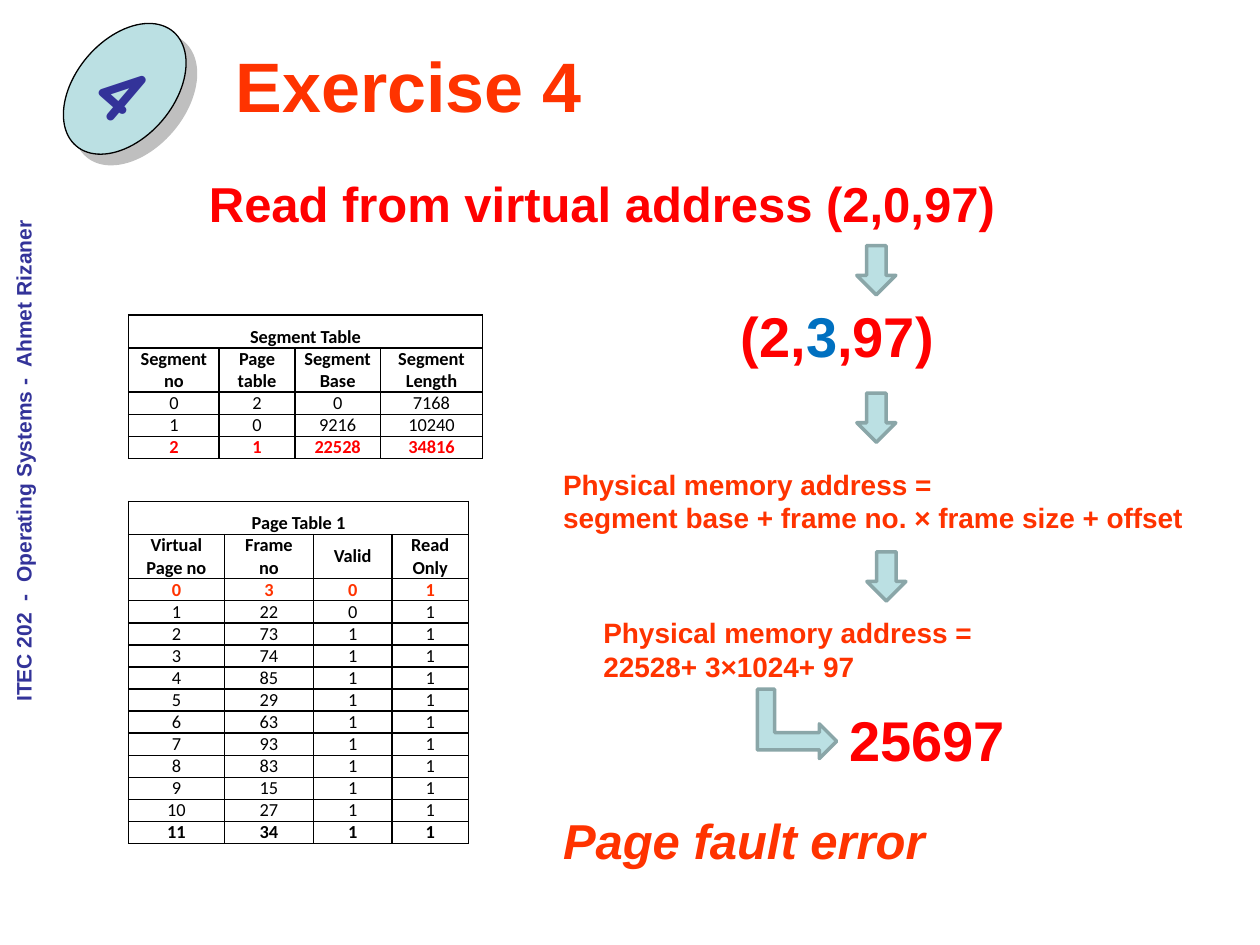
from lxml.etree import SubElement
from pptx import Presentation
from pptx.dml.color import RGBColor
from pptx.enum.shapes import MSO_SHAPE
from pptx.enum.text import MSO_ANCHOR, PP_ALIGN
from pptx.oxml import parse_xml
from pptx.oxml.ns import nsdecls, qn
from pptx.util import Inches, Pt

ORANGE = RGBColor(0xFF, 0x33, 0x00)
RED = RGBColor(0xFF, 0x00, 0x00)
BLUE = RGBColor(0x00, 0x70, 0xC0)
NAVY = RGBColor(0x33, 0x33, 0x99)
BLACK = RGBColor(0x00, 0x00, 0x00)
PALE = RGBColor(0xBB, 0xE0, 0xE3)
GREY = RGBColor(0x8A, 0xA6, 0xA8)

SEGMENTS = [
    ["Segment\nno", "Page table", "Segment\nBase", "Segment\nLength"],
    [0, 2, 0, 7168],
    [1, 0, 9216, 10240],
    [2, 1, 22528, 34816],
]
FRAMES = [3, 22, 73, 74, 85, 29, 63, 93, 83, 15, 27, 34]
PAGES = [["Virtual\nPage no", "Frame\nno", "Valid", "Read\nOnly"]] + [
    [page, frame, int(page > 1), 1] for page, frame in enumerate(FRAMES)
]


def set_font(r, size, color, name="Arial", bold=True, italic=False):
    r.font.size, r.font.name = Pt(size), name
    r.font.bold, r.font.italic = bold, italic
    r.font.color.rgb = color


def add_text(s, box, text, size, color, wrap=True, italic=False):
    sp = s.shapes.add_textbox(*map(Inches, box))
    tf = sp.text_frame
    tf.word_wrap = wrap
    tf.text = text
    for p in tf.paragraphs:
        for r in p.runs:
            set_font(r, size, color, italic=italic)
    return sp


def add_shape(s, kind, box, line, width, rotation=0):
    sp = s.shapes.add_shape(kind, *map(Inches, box))
    sp.rotation = rotation
    sp.shadow.inherit = False
    sp.fill.solid()
    sp.fill.fore_color.rgb = PALE
    sp.line.color.rgb = line
    sp.line.width = Pt(width)
    return sp


def add_sidebar(s, box):
    sp = add_text(s, box, "ITEC 202  -  Operating Systems -  Ahmet Rizaner", 12, NAVY)
    sp.rotation = 270
    sp.text_frame.paragraphs[0].alignment = PP_ALIGN.CENTER


def add_title(s, box):
    title = s.shapes.title
    title.left, title.top, title.width, title.height = map(Inches, box)
    tf = title.text_frame
    tf.text = "Exercise 4"
    tf.vertical_anchor = MSO_ANCHOR.MIDDLE
    p = tf.paragraphs[0]
    p.alignment = PP_ALIGN.CENTER
    set_font(p.runs[0], 40, ORANGE)


def add_badge(s, box):
    sp = add_shape(s, MSO_SHAPE.OVAL, box, BLACK, 0.75, 40.4)
    effects = sp._element.spPr.find(qn("a:effectLst"))
    effects.append(parse_xml(
        f'<a:outerShdw {nsdecls("a")} dist="{Pt(8.5)}" dir="2700000" algn="ctr" '
        'rotWithShape="0"><a:srgbClr val="808080"><a:alpha val="50000"/>'
        '</a:srgbClr></a:outerShdw>'))
    tf = sp.text_frame
    tf.word_wrap = False
    tf.text = "4"
    tf.vertical_anchor = MSO_ANCHOR.MIDDLE
    p = tf.paragraphs[0]
    p.alignment = PP_ALIGN.CENTER
    set_font(p.runs[0], 48, NAVY, "Comic Neue")


def add_borders(cell):
    tcPr = cell._tc.get_or_add_tcPr()
    for side in ("a:lnL", "a:lnR", "a:lnT", "a:lnB"):
        ln = SubElement(tcPr, qn(side), w=str(Pt(1)))
        fill = SubElement(ln, qn("a:solidFill"))
        SubElement(fill, qn("a:srgbClr"), val=str(BLACK))


def add_grid(s, left, top, title, rows, widths, row_styles, header_anchor):
    """Bordered table; row_styles maps a row number to (colour, bold)."""
    rows = [[title, "", "", ""]] + rows
    heights = [0.26, 0.35] + [0.175] * (len(rows) - 2)
    box = left, top, sum(widths), sum(heights)
    table = s.shapes.add_table(len(rows), len(widths), *map(Inches, box)).table
    for column, width in zip(table.columns, widths):
        column.width = Inches(width)
    for i, (values, height) in enumerate(zip(rows, heights)):
        table.rows[i].height = Inches(height)
        color, bold = row_styles.get(i, (BLACK, i < 2))
        for cell, value in zip(table.rows[i].cells, values):
            add_borders(cell)
            cell.fill.background()
            cell.margin_left = cell.margin_right = Inches(0.07)
            cell.margin_top = cell.margin_bottom = 0
            cell.vertical_anchor = header_anchor if i == 1 else MSO_ANCHOR.TOP
            cell.text = str(value)
            for p in cell.text_frame.paragraphs:
                p.alignment = PP_ALIGN.CENTER
                p.font.size = Pt(10.5)
                if i == 0:
                    p.line_spacing = 1.5
                for r in p.runs:
                    set_font(r, 10.5, color, "Calibri", bold)
    table.cell(0, 0).merge(table.cell(0, len(widths) - 1))


def add_translation(s, left, top):
    """Steps from the virtual address down to the page fault."""
    def at(x, y, w, h):
        return left + x, top + y, w, h

    add_text(s, at(0, 0, 6.52, 0.57), "Read from virtual address (2,0,97)", 28, RED, wrap=False)
    for x, y in ((5.24, 0.62), (5.24, 1.79), (5.32, 3.05)):
        add_shape(s, MSO_SHAPE.DOWN_ARROW, at(x, y, 0.31, 0.39), GREY, 2)

    sp = add_text(s, at(4.22, 1.01, 2.27, 0.64), "(2,", 32, RED)
    for text, color in (("3", BLUE), (",97)", RED)):
        r = sp.text_frame.paragraphs[0].add_run()
        r.text = text
        set_font(r, 32, color)

    label = "Physical memory address =\n"
    add_text(s, at(2.81, 2.33, 5.31, 0.64),
             label + "segment base + frame no. × frame size + offset", 16, ORANGE)
    add_text(s, at(3.13, 3.51, 3.59, 0.64), label + "22528+ 3×1024+ 97", 16, ORANGE)
    add_shape(s, MSO_SHAPE.BENT_UP_ARROW, at(4.49, 4.1, 0.55, 0.63), GREY, 2, 90)
    add_text(s, at(5.08, 4.22, 1.56, 0.64), "25697", 32, RED)
    add_text(s, at(2.81, 5.05, 5.08, 0.57), "Page fault error", 28, ORANGE, italic=True)


def main():
    prs = Presentation()
    prs.slide_width, prs.slide_height = Inches(10), Inches(7.5)
    s = prs.slides.add_slide(prs.slide_layouts[5])
    add_sidebar(s, (-3.11, 3.51, 6.59, 0.3))
    add_title(s, (0.86, 0.39, 4.77, 0.56))
    add_badge(s, (0.6, 0.11, 0.78, 1.19))
    add_translation(s, 1.56, 1.33)
    add_grid(s, 1.02, 2.5, "Segment Table", SEGMENTS, [0.72, 0.6, 0.68, 0.81],
             {4: (RED, True)}, MSO_ANCHOR.TOP)
    add_grid(s, 1.02, 3.98, "Page Table 1", PAGES, [0.76, 0.71, 0.62, 0.61],
             {2: (ORANGE, True), 13: (BLACK, True)}, MSO_ANCHOR.MIDDLE)
    prs.save("out.pptx")


if __name__ == "__main__":
    main()
